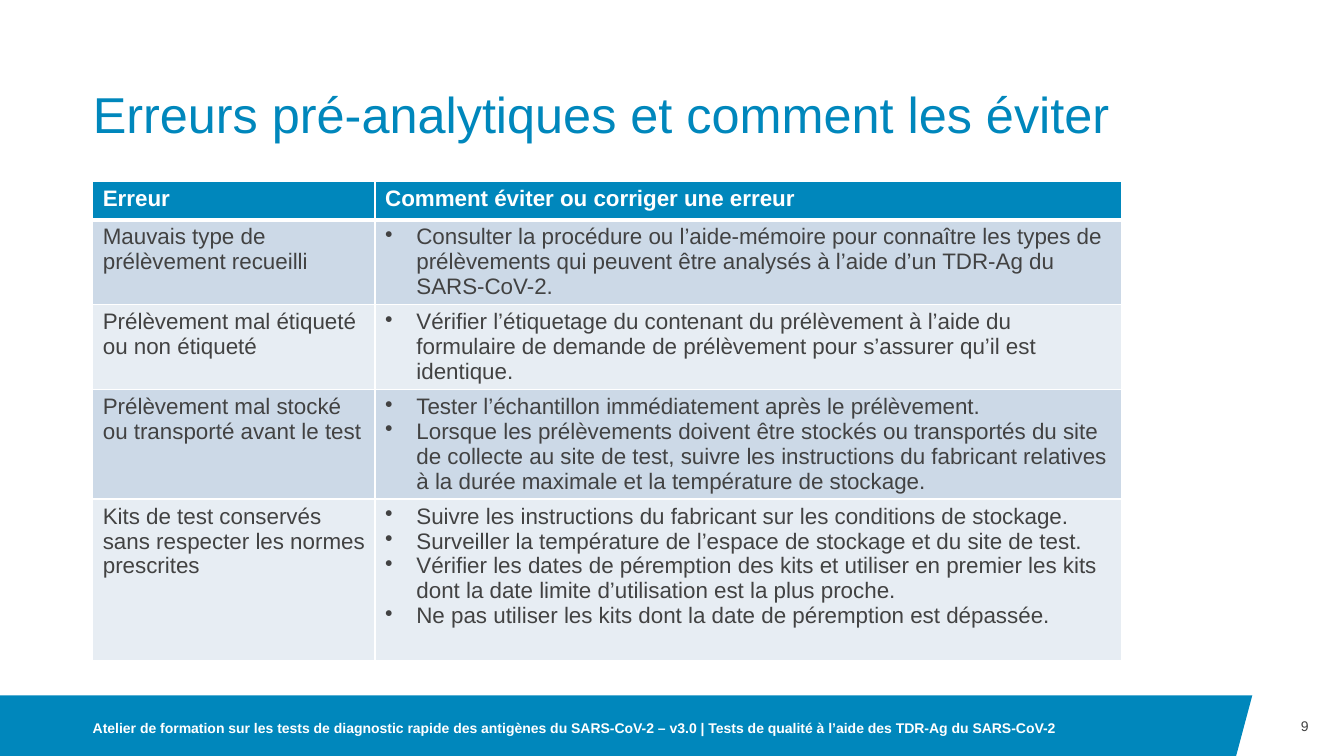
import pptx
import pptx.util
import pptx.dml.color
import pptx.enum.text
import pptx.oxml
import lxml.etree

Inches, Pt = pptx.util.Inches, pptx.util.Pt
ANCHOR, ALIGN = pptx.enum.text.MSO_ANCHOR, pptx.enum.text.PP_ALIGN
COLOURS = {"blue": "0087BC", "text": "424242", "white": "FFFFFF",
           "band": "CCD9E7", "light": "E7EDF3"}
WIDTH, HEIGHT = 13.33, 7.5
LEFT = 0.92
BAND_TOP = 6.9
BULLET_INDENT = 0.31


def colour(name):
    return pptx.dml.color.RGBColor.from_string(COLOURS[name])


def add_text(para, text, size, ink, bold=False):
    span = para.add_run()
    span.text = text
    span.font.name, span.font.size, span.font.bold = "Arial", Pt(size), bold
    span.font.color.rgb = colour(ink)


deck = pptx.Presentation()
deck.slide_width, deck.slide_height = Inches(WIDTH), Inches(HEIGHT)
page = deck.slides.add_slide(deck.slide_layouts[5])

# Footer band with a slanted right end
outline = page.shapes.build_freeform(0, Inches(BAND_TOP))
outline.add_line_segments([(Inches(x), Inches(y)) for x, y in
                           [(12.42, BAND_TOP), (12.26, HEIGHT), (0, HEIGHT)]])
band = outline.convert_to_shape()
band.shadow.inherit = False
band.fill.solid()
band.fill.fore_color.rgb = colour("blue")
band.line.fill.background()

# Title, footer and page number
title = page.shapes.title
title.left, title.top, title.width, title.height = map(Inches, (LEFT, 0.4, 11.5, 1.03))
footer = page.shapes.add_textbox(*map(Inches, (LEFT, 6.95, 10.64, 0.55)))
number = page.shapes.add_textbox(*map(Inches, (12.42, BAND_TOP, 0.56, 0.6)))
FOOTER = ("Atelier de formation sur les tests de diagnostic rapide des antigènes du SARS-CoV-2"
          " – v3.0 | Tests de qualité à l’aide des TDR-Ag du SARS-CoV-2")
for box, anchor, align, text, size, ink, bold in [
    (title, ANCHOR.BOTTOM, ALIGN.LEFT,
     "Erreurs pré-analytiques et comment les éviter", 36, "blue", False),
    (footer, ANCHOR.MIDDLE, ALIGN.LEFT, FOOTER, 10, "white", True),
    (number, ANCHOR.MIDDLE, ALIGN.RIGHT, "9", 10, "text", False),
]:
    frame = box.text_frame
    frame.word_wrap = True
    frame.auto_size = pptx.enum.text.MSO_AUTO_SIZE.NONE
    frame.vertical_anchor = anchor
    frame.margin_left = frame.margin_right = frame.margin_top = frame.margin_bottom = 0
    frame.paragraphs[0].alignment = align
    add_text(frame.paragraphs[0], text, size, ink, bold)
title.text_frame.paragraphs[0].line_spacing = 0.9

# Table of errors and remedies
ROWS = [
    ("Erreur", ["Comment éviter ou corriger une erreur"]),
    ("Mauvais type de prélèvement recueilli",
     ["Consulter la procédure ou l’aide-mémoire pour connaître les types de prélèvements "
      "qui peuvent être analysés à l’aide d’un TDR-Ag du SARS-CoV-2."]),
    ("Prélèvement mal étiqueté ou non étiqueté",
     ["Vérifier l’étiquetage du contenant du prélèvement à l’aide du formulaire de demande "
      "de prélèvement pour s’assurer qu’il est identique."]),
    ("Prélèvement mal stocké ou transporté avant le test",
     ["Tester l’échantillon immédiatement après le prélèvement.",
      "Lorsque les prélèvements doivent être stockés ou transportés du site de collecte au "
      "site de test, suivre les instructions du fabricant relatives à la durée maximale et "
      "la température de stockage."]),
    ("Kits de test conservés sans respecter les normes prescrites",
     ["Suivre les instructions du fabricant sur les conditions de stockage.",
      "Surveiller la température de l’espace de stockage et du site de test.",
      "Vérifier les dates de péremption des kits et utiliser en premier les kits dont la "
      "date limite d’utilisation est la plus proche.",
      "Ne pas utiliser les kits dont la date de péremption est dépassée."]),
]
COLUMN_WIDTHS = [2.8, 7.4]
ROW_HEIGHTS = [0.38, 0.84, 0.84, 1.08, 1.6]
table = page.shapes.add_table(len(ROWS), 2, Inches(LEFT), Inches(1.8),
                              Inches(sum(COLUMN_WIDTHS)), Inches(sum(ROW_HEIGHTS))).table
for column, width in zip(table.columns, COLUMN_WIDTHS):
    column.width = Inches(width)

for r, (error, remedies) in enumerate(ROWS):
    table.rows[r].height = Inches(ROW_HEIGHTS[r])
    header = r == 0
    for c, lines in enumerate([[error], remedies]):
        cell = table.cell(r, c)
        for i, line in enumerate(lines):
            para = cell.text_frame.paragraphs[0] if i == 0 else cell.text_frame.add_paragraph()
            add_text(para, line, 16, "white" if header else "text", header)
            if c == 1 and not header:
                props = para._p.get_or_add_pPr()
                props.set("marL", str(Inches(BULLET_INDENT)))
                props.set("indent", str(-Inches(BULLET_INDENT)))
                bullet = lxml.etree.SubElement(props, pptx.oxml.ns.qn("a:buChar"))
                bullet.set("char", "•")
        # Borders come before the fill in the cell properties
        for side in ("lnL", "lnR", "lnT", "lnB"):
            thick = (header and side == "lnB") or (r == 1 and side == "lnT")
            border = lxml.etree.SubElement(cell._tc.get_or_add_tcPr(),
                                           pptx.oxml.ns.qn("a:" + side))
            border.set("w", str(Pt(3 if thick else 1)))
            paint = lxml.etree.SubElement(border, pptx.oxml.ns.qn("a:solidFill"))
            lxml.etree.SubElement(paint, pptx.oxml.ns.qn("a:srgbClr")).set("val", COLOURS["white"])
        cell.fill.solid()
        cell.fill.fore_color.rgb = colour("blue" if header else "band" if r % 2 else "light")

deck.save("out.pptx")
